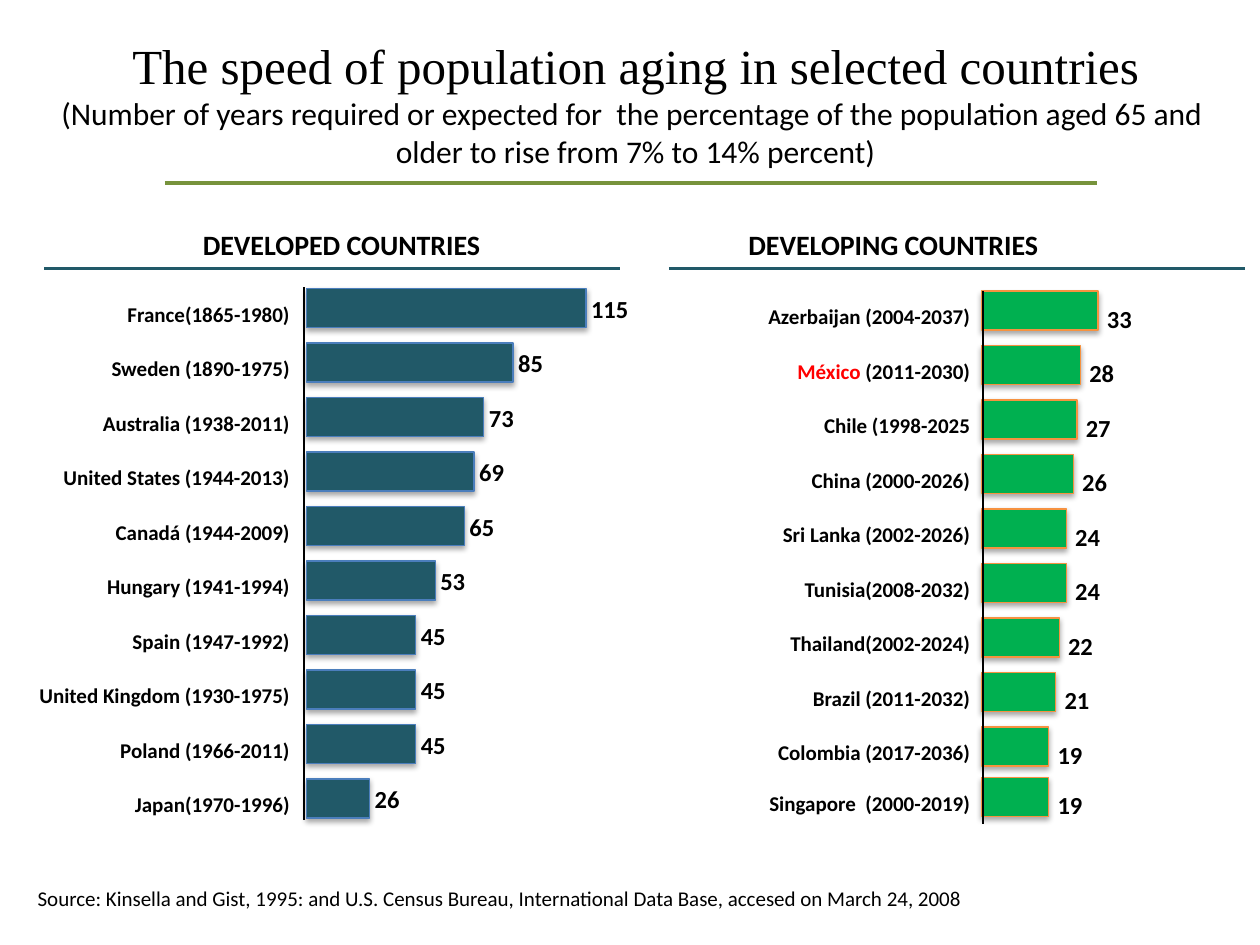
import pptx
import pptx.util
import pptx.dml.color
import pptx.enum.shapes
import pptx.enum.text
import pptx.oxml
import pptx.oxml.ns
from lxml import etree

Pt = pptx.util.Pt
RGBColor = pptx.dml.color.RGBColor
ALIGN = pptx.enum.text.PP_ALIGN

BLACK = RGBColor(0x00, 0x00, 0x00)
RED = RGBColor(0xFF, 0x00, 0x00)
TEAL = RGBColor(0x21, 0x59, 0x68)
BLUE = RGBColor(0x4B, 0x7E, 0xBC)
GREEN = RGBColor(0x00, 0xB0, 0x50)
ORANGE = RGBColor(0xF6, 0x92, 0x40)
OLIVE = RGBColor(0x77, 0x93, 0x3C)

# Content
TITLE = "The speed of population aging in selected countries"
SUBTITLE = [
    "(Number of years required or expected for  the percentage of the population aged 65 and ",
    "older to rise from 7% to 14% percent)",
]
SOURCE = ("Source: Kinsella and Gist, 1995: and U.S. Census Bureau, "
          "International Data Base, accesed on March 24, 2008")
HIGHLIGHT = "México"

DEVELOPED = [
    ("France(1865-1980)", 115),
    ("Sweden (1890-1975)", 85),
    ("Australia (1938-2011)", 73),
    ("United States (1944-2013)", 69),
    ("Canadá (1944-2009)", 65),
    ("Hungary (1941-1994)", 53),
    ("Spain (1947-1992)", 45),
    ("United Kingdom (1930-1975)", 45),
    ("Poland (1966-2011)", 45),
    ("Japan(1970-1996)", 26),
]
DEVELOPING = [
    ("Azerbaijan (2004-2037)", 33),
    ("México (2011-2030)", 28),
    ("Chile (1998-2025", 27),
    ("China (2000-2026)", 26),
    ("Sri Lanka (2002-2026)", 24),
    ("Tunisia(2008-2032)", 24),
    ("Thailand(2002-2024)", 22),
    ("Brazil (2011-2032)", 21),
    ("Colombia (2017-2036)", 19),
    ("Singapore  (2000-2019)", 19),
]

# Each panel in points; last_lift raises the bottom row slightly
PANELS = [
    dict(heading="DEVELOPED COUNTRIES", heading_left=115.9, rule_left=25.2,
         rows=DEVELOPED, fill=TEAL, outline=BLUE, axis=173.6, axis_top=164.2,
         bar_left=175, top=164.9, scale=1.39, label_right=165.6,
         value_gap=(2.9, 2.9), last_lift=0),
    dict(heading="DEVELOPING COUNTRIES", heading_left=427.7, rule_left=382.3,
         rows=DEVELOPING, fill=GREEN, outline=ORANGE, axis=561.6, axis_top=166.3,
         bar_left=560.9, top=166.3, scale=2.02, label_right=554.4,
         value_gap=(5, 7.2), last_lift=2.2),
]
ROW_PITCH = 31.14
BAR_HEIGHT = 22.3
LABEL_WIDTH = 163
LABEL_DROP = 7.2
AXIS_LENGTH = 304.6
RULE_LENGTH = 329

deck = pptx.Presentation()
deck.slide_width, deck.slide_height = Pt(720), Pt(540)
page = deck.slides.add_slide(deck.slide_layouts[6])


def set_font(font, size, bold=False, name="Calibri", color=BLACK):
    font.size, font.bold, font.name = Pt(size), bold, name
    font.color.rgb = color


def add_box(left, top, width, height, margin=0):
    box = page.shapes.add_textbox(Pt(left), Pt(top), Pt(width), Pt(height))
    frame = box.text_frame
    frame.word_wrap = True
    frame.margin_left = frame.margin_right = Pt(margin)
    frame.margin_top = frame.margin_bottom = Pt(margin / 2)
    return frame


def add_text(text, left, top, width, height, size, bold=True, align=ALIGN.LEFT, margin=0):
    para = add_box(left, top, width, height, margin).paragraphs[0]
    para.alignment = align
    set_font(para.font, size, bold)
    if text.startswith(HIGHLIGHT):
        span = para.add_run()
        span.text = HIGHLIGHT
        span.font.color.rgb = RED
        text = text[len(HIGHLIGHT):]
    para.add_run().text = text


def add_line(x1, y1, x2, y2, color, width):
    line = page.shapes.add_connector(
        pptx.enum.shapes.MSO_CONNECTOR.STRAIGHT, Pt(x1), Pt(y1), Pt(x2), Pt(y2))
    line.line.color.rgb = color
    line.line.width = Pt(width)
    etree.SubElement(line._element.spPr, pptx.oxml.ns.qn("a:effectLst"))


def add_bar(left, top, width, fill, outline):
    bar = page.shapes.add_shape(pptx.enum.shapes.MSO_SHAPE.RECTANGLE,
                                Pt(left), Pt(top), Pt(width), Pt(BAR_HEIGHT))
    bar.fill.solid()
    bar.fill.fore_color.rgb = fill
    bar.line.color.rgb = outline
    bar.line.width = Pt(0.75)
    # Soft shadow straight below
    bar.shadow.inherit = False
    effects = bar._element.spPr.find(pptx.oxml.ns.qn("a:effectLst"))
    effects.append(pptx.oxml.parse_xml(
        f'<a:outerShdw {pptx.oxml.ns.nsdecls("a")} blurRad="40000" dist="23000" '
        'dir="5400000" rotWithShape="0"><a:srgbClr val="000000">'
        '<a:alpha val="35000"/></a:srgbClr></a:outerShdw>'))


# Title and subtitle
title = add_box(20.2, 16.6, 686.2, 85, margin=7.2)
title.text = "\n".join([TITLE] + SUBTITLE)
for index, para in enumerate(title.paragraphs):
    para.alignment = ALIGN.CENTER
    if index == 0:
        set_font(para.font, 28, name="Times New Roman")
    else:
        set_font(para.font, 18)
add_line(94.3, 104.4, 627.1, 104.4, OLIVE, 2.25)

# Bar panels
for panel in PANELS:
    add_text(panel["heading"], panel["heading_left"], 130.3, 205, 19.4, 16)
    add_line(panel["rule_left"], 153.4, panel["rule_left"] + RULE_LENGTH, 153.4, TEAL, 1.5)
    gap_x, gap_y = panel["value_gap"]
    last = len(panel["rows"]) - 1
    for index, (label, years) in enumerate(panel["rows"]):
        top = panel["top"] + index * ROW_PITCH
        if index == last:
            top -= panel["last_lift"]
        width = years * panel["scale"]
        add_bar(panel["bar_left"], top, width, panel["fill"], panel["outline"])
        add_text(str(years), panel["bar_left"] + width + gap_x, top + gap_y, 24, 17, 14)
        add_text(label, panel["label_right"] - LABEL_WIDTH, top + LABEL_DROP,
                 LABEL_WIDTH, 14.5, 12, align=ALIGN.RIGHT)
    add_line(panel["axis"], panel["axis_top"],
             panel["axis"], panel["axis_top"] + AXIS_LENGTH, BLACK, 1)

# Source note
add_text(SOURCE, 14.4, 502.6, 613.4, 21.8, 12, bold=False, margin=7.2)

deck.save("out.pptx")
